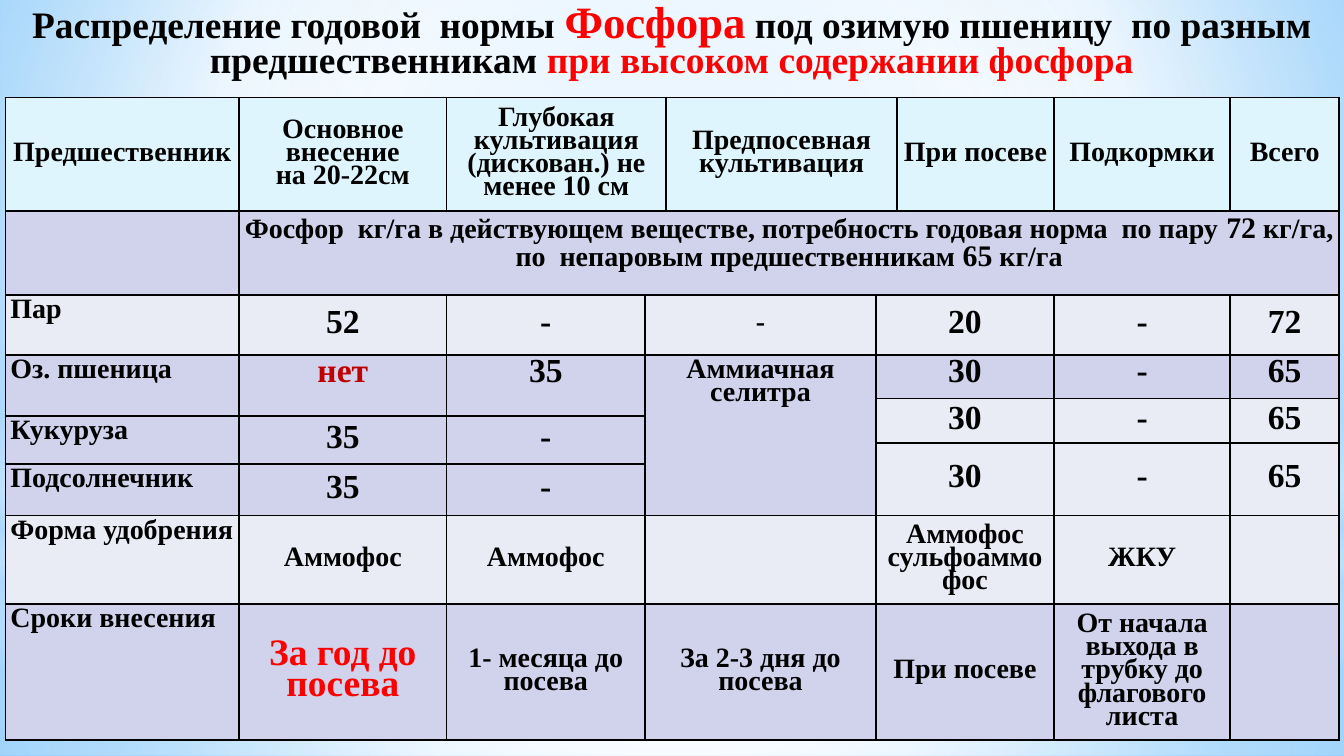
from lxml import etree
from pptx import Presentation
from pptx.dml.color import RGBColor
from pptx.enum.shapes import MSO_SHAPE
from pptx.enum.text import MSO_ANCHOR, PP_ALIGN
from pptx.oxml.ns import qn
from pptx.util import Pt

RECTANGLE, OVAL = MSO_SHAPE.RECTANGLE, MSO_SHAPE.OVAL
TOP, MIDDLE = MSO_ANCHOR.TOP, MSO_ANCHOR.MIDDLE
LEFT, CENTER = PP_ALIGN.LEFT, PP_ALIGN.CENTER

FONT = "Times New Roman"
COLORS = {"black": "000000", "red": "FF0000", "dark red": "C00000",
          "header": "DFF5FD", "lilac": "D0D3EB", "pale": "E9EBF5",
          "white": "FFFFFF", "sky": "B4DCFA", "light blue": "9ED5FF", "blue": "5BB9FF"}

TITLE = [("Распределение годовой  нормы ", 20, "black"),
         ("Фосфора", 24, "red"),
         (" под озимую пшеницу  по разным предшественникам ", 20, "black"),
         ("при высоком содержании фосфора", 20, "red")]

COLUMN_WIDTHS = [125.3, 111, 106.5, 11.3, 112.3, 11.3, 84.2, 94.4, 58.3]
ROW_HEIGHTS = [60.7, 45, 32.1, 23.5, 9.2, 14.6, 11.3, 27.6, 47.4, 72.8]

# Column edges between which the cells of a band lie
HEADER_EDGES = [0, 1, 2, 4, 6, 7, 8, 9]
NORM_EDGES = [0, 1, 9]
BODY_EDGES = [0, 1, 2, 3, 5, 7, 8, 9]
CROP_EDGES, SPRING_EDGES, SOWING_EDGES = BODY_EDGES[:4], BODY_EDGES[3:5], BODY_EDGES[4:]

# First row, rows spanned, column edges, texts.
# A line break starts a paragraph; text between bars is one point larger.
BANDS = [
    (0, 1, HEADER_EDGES, ["Предшественник", "Основное внесение\nна 20-22см",
                          "Глубокая культивация (дискован.) не менее 10 см",
                          "Предпосевная культивация", "При посеве", "Подкормки", "Всего"]),
    (1, 1, NORM_EDGES, ["", "Фосфор  кг/га в действующем веществе, потребность годовая норма  "
                            "по пару |72| кг/га,\n"
                            "по  непаровым предшественникам |65| кг/га"]),
    (2, 1, BODY_EDGES, ["Пар", "52", "-", "-", "20", "-", "72"]),
    (3, 2, CROP_EDGES, ["Оз. пшеница", "нет", "35"]),
    (5, 2, CROP_EDGES, ["Кукуруза", "35", "-"]),
    (7, 1, CROP_EDGES, ["Подсолнечник", "35", "-"]),
    (3, 5, SPRING_EDGES, ["Аммиачная селитра"]),
    (3, 1, SOWING_EDGES, ["30", "-", "65"]),
    (4, 2, SOWING_EDGES, ["30", "-", "65"]),
    (6, 2, SOWING_EDGES, ["30", "-", "65"]),
    (8, 1, BODY_EDGES, ["Форма удобрения", "Аммофос", "Аммофос", "",
                        "Аммофос\nсульфоаммофос", "ЖКУ", ""]),
    (9, 1, BODY_EDGES, ["Сроки внесения", "За год до посева", "1- месяца до посева",
                        "За 2-3 дня до посева", "При посеве",
                        "От начала выхода в трубку до флагового листа", ""]),
]
ACCENTS = {"нет": (18, "dark red"), "За год до посева": (20, "red")}

# Stops are position, colour, opacity; a focus of None means a vertical gradient.
CENTRE = [50] * 4
BACKDROP = [(0, "light blue", 100), (60, "white", 100), (100, "blue", 100)]
GLOWS = [
    (RECTANGLE, 301.7, 103.3, CENTRE, [(0, "white", 91), (37, "white", 76), (100, "sky", 79)]),
    (RECTANGLE, 0, 301.7, CENTRE, [(0, "white", 89), (48, "white", 62), (100, "sky", 79)]),
    (RECTANGLE, 222.5, 135.4, None, [(0, "white", 0), (29, "white", 30), (45, "sky", 40),
                                     (55, "white", 26), (65, "sky", 60), (100, "white", 0)]),
    (OVAL, 94.3, 301.7, CENTRE, [(0, "white", 100), (56, "white", 0)]),
]


def rgb(name):
    return RGBColor.from_string(COLORS[name])


def add_element(parent, tag, **attributes):
    element = etree.SubElement(parent, qn(tag))
    for key, value in attributes.items():
        element.set(key, str(value))
    return element


def paint_gradient(fill, holder, stops, focus):
    fill.gradient()
    gradient = next(holder.iter(qn("a:gradFill")))
    for child in list(gradient):
        gradient.remove(child)
    stop_list = add_element(gradient, "a:gsLst")
    for position, color, opacity in stops:
        stop = add_element(stop_list, "a:gs", pos=position * 1000)
        paint = add_element(stop, "a:srgbClr", val=COLORS[color])
        add_element(paint, "a:alpha", val=opacity * 1000)
    if focus is None:
        add_element(gradient, "a:lin", ang=5400000, scaled=0)
    else:
        area = add_element(gradient, "a:path", path="circle")
        add_element(area, "a:fillToRect",
                    **{side: share * 1000 for side, share in zip("ltrb", focus)})


def set_font(font, size, color):
    font.name, font.size, font.bold = FONT, Pt(size), True
    font.color.rgb = rgb(color)


def add_borders(cell):
    properties = cell._tc.get_or_add_tcPr()
    for side in ("a:lnL", "a:lnR", "a:lnT", "a:lnB"):
        line = add_element(properties, side, w=Pt(1))
        add_element(add_element(line, "a:solidFill"), "a:srgbClr", val=COLORS["black"])


def write_cell(cell, row, column, text):
    is_label = column == 0 and row > 0
    is_amount = text.isdigit() or (text == "-" and column != 3)
    size, color = ACCENTS.get(text, (18 if is_amount else 15, "black"))
    cell.vertical_anchor = TOP if is_label or row in (1, 3) else MIDDLE
    for index, line in enumerate(text.split("\n")):
        para = cell.text_frame.add_paragraph() if index else cell.text_frame.paragraphs[0]
        para.alignment = LEFT if is_label else CENTER
        para.line_spacing = 0.85 if row == 1 else 0.75
        set_font(para.font, size, color)
        for order, piece in enumerate(line.split("|")):
            if piece:
                span = para.add_run()
                span.text = piece
                if order % 2:
                    span.font.size = Pt(size + 1)


def add_norms_table(slide):
    frame = slide.shapes.add_table(len(ROW_HEIGHTS), len(COLUMN_WIDTHS), Pt(2.9), Pt(52.3),
                                   Pt(sum(COLUMN_WIDTHS)), Pt(sum(ROW_HEIGHTS)))
    table = frame.table
    table.first_row = table.horz_banding = False
    for column, width in zip(table.columns, COLUMN_WIDTHS):
        column.width = Pt(width)
    for row, height in zip(table.rows, ROW_HEIGHTS):
        row.height = Pt(height)
    for cell in table.iter_cells():
        cell.margin_left = cell.margin_right = cell.margin_top = cell.margin_bottom = Pt(2.7)
        add_borders(cell)
    for row, rows, edges, texts in BANDS:
        for start, end, text in zip(edges, edges[1:], texts):
            cell = table.cell(row, start)
            if rows > 1 or end - start > 1:
                cell.merge(table.cell(row + rows - 1, end - 1))
            is_pale = row % 2 == 0
            cell.fill.solid()
            cell.fill.fore_color.rgb = rgb("header" if row == 0 else "pale" if is_pale else "lilac")
            write_cell(cell, row, start, text)


def add_title(slide):
    box = slide.shapes.add_textbox(0, Pt(0.7), Pt(720), Pt(45.4))
    box.text_frame.word_wrap = True
    box.text_frame.margin_left = box.text_frame.margin_right = Pt(5.1)
    box.text_frame.margin_top = box.text_frame.margin_bottom = Pt(2.7)
    para = box.text_frame.paragraphs[0]
    para.alignment, para.line_spacing = CENTER, 0.75
    for text, size, color in TITLE:
        span = para.add_run()
        span.text = text
        set_font(span.font, size, color)


deck = Presentation()
deck.slide_width, deck.slide_height = Pt(720), Pt(405)
slide = deck.slides.add_slide(deck.slide_layouts[6])
paint_gradient(slide.background.fill, slide.element, BACKDROP, [20, 10, 20, 60])
for kind, top, height, focus, stops in GLOWS:
    glow = slide.shapes.add_shape(kind, 0, Pt(top), Pt(720), Pt(height))
    glow.shadow.inherit = False
    glow.line.fill.background()
    paint_gradient(glow.fill, glow.element, stops, focus)
add_norms_table(slide)
add_title(slide)
deck.save("out.pptx")
